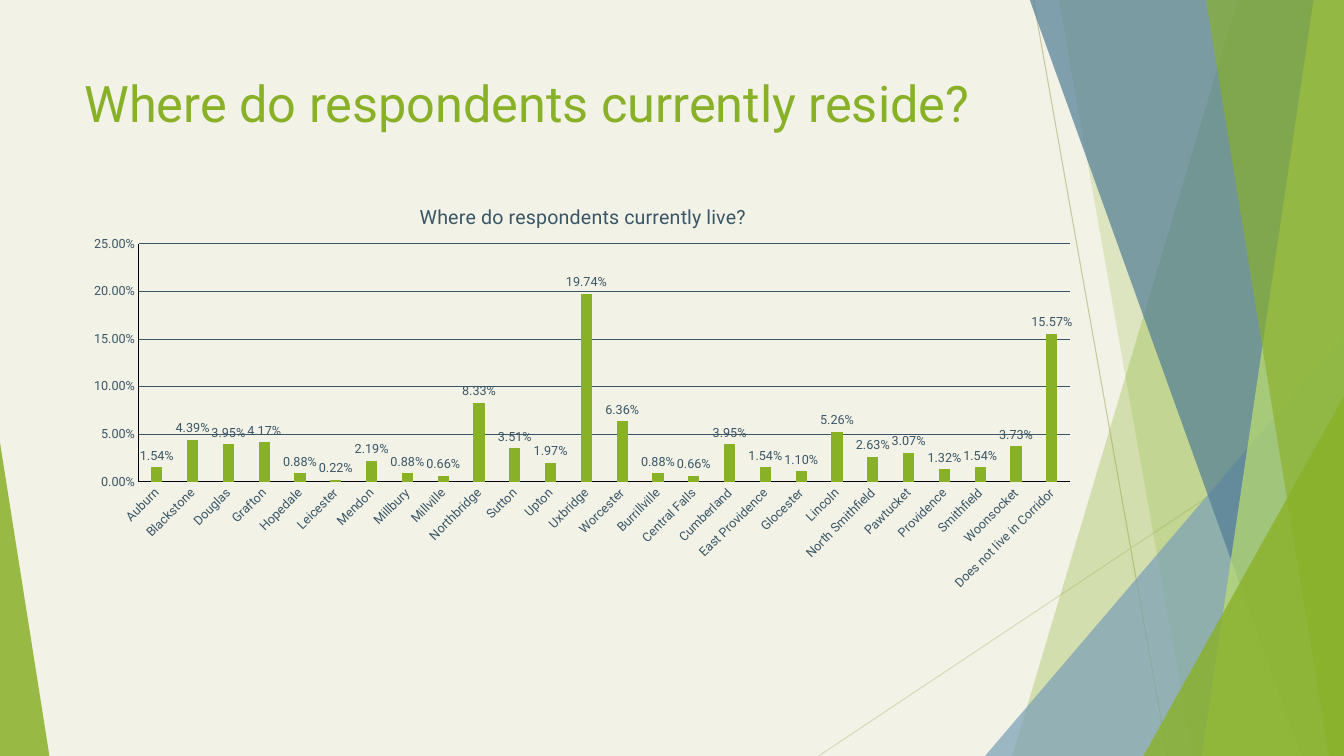
import lxml.etree
import pptx
import pptx.chart.data
import pptx.dml.color
import pptx.enum.chart
import pptx.enum.shapes
import pptx.enum.text
import pptx.oxml.ns
import pptx.util

Inches = pptx.util.Inches
qn = pptx.oxml.ns.qn

RESIDENCE = {
    "Auburn": 0.0154, "Blackstone": 0.0439, "Douglas": 0.0395, "Grafton": 0.0417,
    "Hopedale": 0.0088, "Leicester": 0.0022, "Mendon": 0.0219, "Millbury": 0.0088,
    "Millville": 0.0066, "Northbridge": 0.0833, "Sutton": 0.0351, "Upton": 0.0197,
    "Uxbridge": 0.1974, "Worcester": 0.0636, "Burrillville": 0.0088,
    "Central Falls": 0.0066, "Cumberland": 0.0395, "East Providence": 0.0154,
    "Glocester": 0.011, "Lincoln": 0.0526, "North Smithfield": 0.0263,
    "Pawtucket": 0.0307, "Providence": 0.0132, "Smithfield": 0.0154,
    "Woonsocket": 0.0373, "Does not live in Corridor": 0.1557,
}


class SlideBuilder:
    """Holds the style and the current slide, and draws each kind of element."""

    colors = {
        "background": "F2F2E7", "green": "89B128", "lime": "BEDF70",
        "sky": "7BA1B7", "steel": "517C94", "text": "3A5666", "axis": "000000",
        "long_line": "C8C89A", "short_line": "D9D9B9",
    }
    font_name = "Roboto"
    width, height = 13.33, 7.5

    def __init__(self):
        self.presentation = pptx.Presentation()
        self.presentation.slide_width = Inches(self.width)
        self.presentation.slide_height = Inches(self.height)
        self.slide = self.presentation.slides.add_slide(self.presentation.slide_layouts[6])
        self.shapes = self.slide.shapes
        self.paint(self.slide.background.fill, "background")

    def color(self, name):
        return pptx.dml.color.RGBColor.from_string(self.colors[name])

    def assign(self, target, values):
        for name, value in values.items():
            setattr(target, name, value)

    def paint(self, fill, color):
        fill.solid()
        fill.fore_color.rgb = self.color(color)

    def style_font(self, font, size, color):
        self.assign(font, {"name": self.font_name, "size": pptx.util.Pt(size), "bold": False})
        font.color.rgb = self.color(color)

    def style_line(self, line, color):
        line.color.rgb = self.color(color)
        line.width = pptx.util.Pt(0.75)

    def line(self, start, end, color):
        points = [Inches(value) for value in (*start, *end)]
        connector = self.shapes.add_connector(pptx.enum.shapes.MSO_CONNECTOR.STRAIGHT, *points)
        self.style_line(connector.line, color)
        lxml.etree.SubElement(connector._element.spPr, qn("a:effectLst"))

    def glass(self, shape, color, opacity):
        shape.shadow.inherit = False
        self.paint(shape.fill, color)
        shape.line.fill.background()
        color_element = shape._element.spPr.find(qn("a:solidFill"))[0]
        alpha = lxml.etree.SubElement(color_element, qn("a:alpha"))
        alpha.set("val", str(opacity * 1000))

    def band(self, top_left, bottom_left, color, opacity):
        top = -0.01
        corners = [(self.width, top), (self.width, self.height), (bottom_left, self.height)]
        builder = self.shapes.build_freeform(Inches(top_left), Inches(top))
        builder.add_line_segments([(Inches(x), Inches(y)) for x, y in corners], close=True)
        self.glass(builder.convert_to_shape(), color, opacity)

    def triangle(self, left, top, width, apex, color, opacity):
        box = [Inches(value) for value in (left, top, width, self.height - top)]
        shape = self.shapes.add_shape(pptx.enum.shapes.MSO_SHAPE.ISOSCELES_TRIANGLE, *box)
        shape.adjustments[0] = apex
        self.glass(shape, color, opacity)

    def title(self, text, box):
        text_frame = self.shapes.add_textbox(*[Inches(value) for value in box]).text_frame
        self.assign(text_frame, {
            "word_wrap": True,
            "vertical_anchor": pptx.enum.text.MSO_ANCHOR.TOP,
        })
        paragraph = text_frame.paragraphs[0]
        paragraph.text = text
        self.style_font(paragraph.runs[0].font, 36, "green")

    def place(self, element, index, values):
        layout = element.find(qn("c:layout"))
        if layout is None:
            layout = lxml.etree.Element(qn("c:layout"))
            element.insert(index, layout)
        manual = lxml.etree.SubElement(layout, qn("c:manualLayout"))
        for name, value in values.items():
            lxml.etree.SubElement(manual, qn(f"c:{name}")).set("val", str(value))

    def column_chart(self, title, values, box):
        data = pptx.chart.data.CategoryChartData(number_format="0.00%")
        data.categories = list(values)
        data.add_series("Series 1", list(values.values()))
        chart = self.shapes.add_chart(
            pptx.enum.chart.XL_CHART_TYPE.COLUMN_CLUSTERED,
            *[Inches(value) for value in box], data).chart
        chart.has_legend = False
        self.style_font(chart.font, 10, "text")
        chart.has_title = True
        paragraph = chart.chart_title.text_frame.paragraphs[0]
        paragraph.text = title
        self.style_font(paragraph.runs[0].font, 14, "text")

        for axis in (chart.category_axis, chart.value_axis):
            self.assign(axis, {
                "major_tick_mark": pptx.enum.chart.XL_TICK_MARK.NONE,
                "minor_tick_mark": pptx.enum.chart.XL_TICK_MARK.NONE,
            })
            self.style_font(axis.tick_labels.font, 9, "text")
            self.style_line(axis.format.line, "axis")
        self.assign(chart.value_axis, {
            "minimum_scale": 0, "maximum_scale": 0.25, "major_unit": 0.05,
            "has_major_gridlines": True,
        })
        self.style_line(chart.value_axis.major_gridlines.format.line, "text")
        number_format = {"number_format": "0.00%", "number_format_is_linked": False}
        self.assign(chart.value_axis.tick_labels, number_format)

        plot = chart.plots[0]
        self.assign(plot, {
            "gap_width": 219, "overlap": -27, "vary_by_categories": False,
            "has_data_labels": True,
        })
        self.paint(plot.series[0].format.fill, "green")
        self.assign(plot.data_labels, {
            **number_format, "show_value": True,
            "position": pptx.enum.chart.XL_LABEL_POSITION.OUTSIDE_END,
        })
        self.style_font(plot.data_labels.font, 9, "text")

        root = chart._chartSpace
        root.xpath(".//c:catAx/c:txPr/a:bodyPr")[0].set("rot", "-2700000")
        self.place(root.xpath("c:chart/c:title")[0], 1, {
            "xMode": "edge", "yMode": "edge", "x": 0.34, "y": 0.05})
        self.place(root.xpath("c:chart/c:plotArea")[0], 0, {
            "layoutTarget": "inner", "xMode": "edge", "yMode": "edge",
            "x": 0.064, "y": 0.156, "w": 0.927, "h": 0.566})


def main():
    builder = SlideBuilder()
    builder.line((10.25, 0), (11.58, 7.5), "long_line")
    builder.line((13.33, 4.03), (8.12, 7.5), "short_line")
    builder.band(12.28, 10.04, "green", 30)
    builder.band(10.5, 11.83, "green", 20)
    builder.triangle(9.77, 3.33, 3.56, 1, "sky", 72)
    builder.band(10.21, 12.91, "steel", 70)
    builder.band(13.03, 11.92, "lime", 70)
    builder.band(11.96, 13.18, "green", 65)
    builder.triangle(11.34, 3.93, 1.99, 1, "green", 80)
    builder.triangle(0, 4.39, 0.49, 0, "green", 85)
    builder.title("Where do respondents currently reside?", (0.74, 0.67, 9.4, 1.44))
    builder.column_chart("Where do respondents currently live?", RESIDENCE,
                         (0.74, 1.77, 9.96, 4.17))
    builder.presentation.save("out.pptx")


if __name__ == "__main__":
    main()
